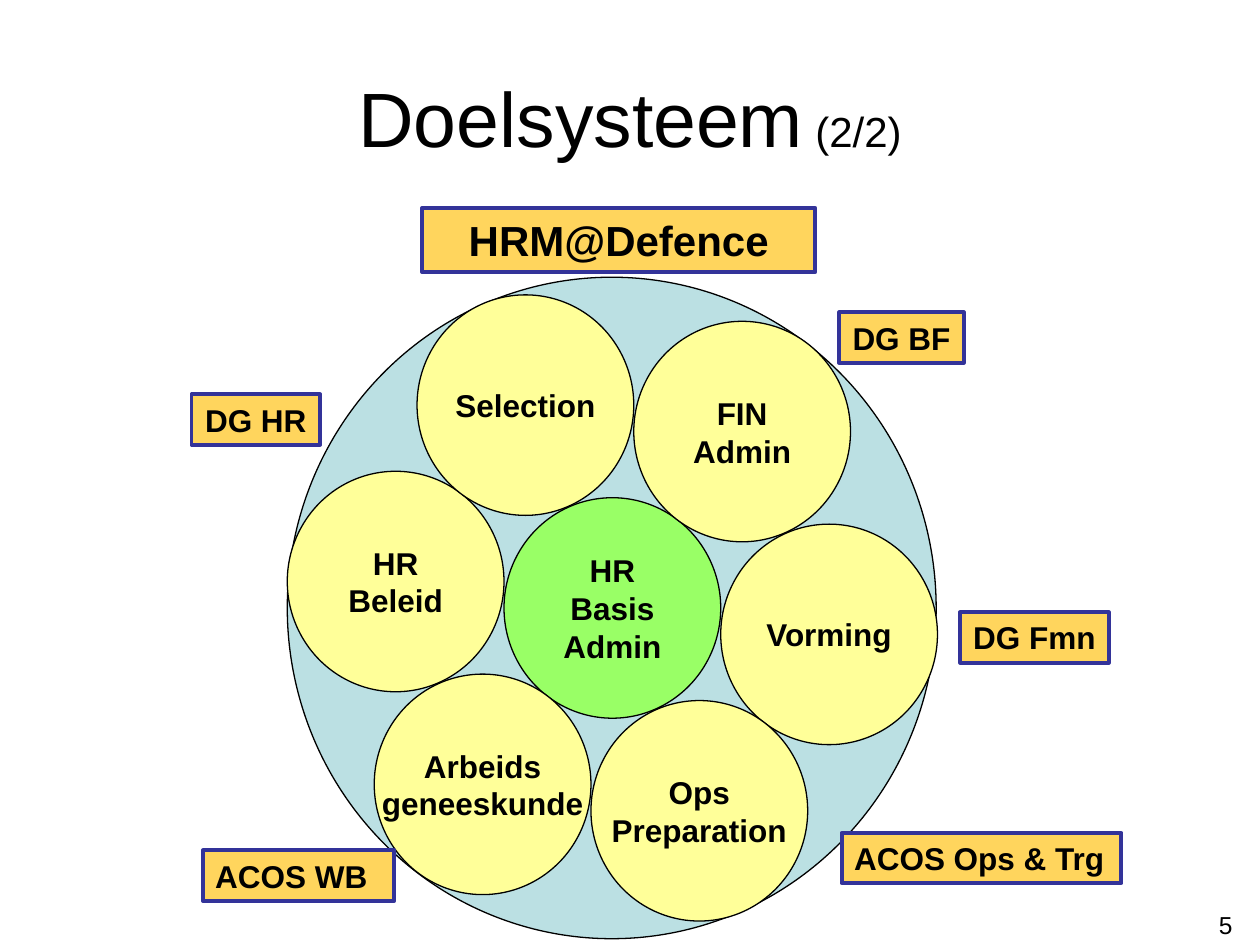
from dataclasses import dataclass

from pptx import Presentation
from pptx.dml.color import RGBColor
from pptx.enum.shapes import MSO_SHAPE as Preset
from pptx.enum.text import MSO_ANCHOR as Anchor, MSO_AUTO_SIZE as AutoSize, PP_ALIGN as Align
from pptx.util import Inches, Pt

FONT = "Arial"
BLACK, NAVY = "000000", "333399"
PALE_BLUE, GREEN, YELLOW, AMBER = "BBE0E3", "99FF66", "FFFF99", "FFD55D"
CIRCLE_WIDTH, CIRCLE_HEIGHT = 1.72, 1.75
HUB_LEFT, HUB_TOP = 4.0, 3.95


@dataclass
class Label:
    text: str
    left: float
    top: float
    width: float
    height: float = 0.4
    size: int = 18
    align: Align = Align.CENTER
    wrap: bool = False


@dataclass
class OppositePair:
    """Two circles mirrored through the hub; the offset leads to the first."""
    first: str
    second: str
    across: float
    down: float


PAIRS = [
    OppositePair("FIN\nAdmin", "Arbeids\ngeneeskunde", 1.03, -1.4),
    OppositePair("Vorming", "HR\nBeleid", 1.72, 0.21),
    OppositePair("Ops\nPreparation", "Selection", 0.69, 1.61),
]

LABELS = [
    Label("DG HR", 1.52, 3.13, 1.02),
    Label("ACOS WB", 1.61, 6.75, 1.52, align=Align.LEFT, wrap=True),
    Label("ACOS Ops & Trg", 6.68, 6.61, 2.22, align=Align.LEFT),
    Label("DG BF", 6.66, 2.48, 0.99),
    Label("DG Fmn", 7.62, 4.86, 1.18),
    Label("HRM@Defence", 3.35, 1.65, 3.12, 0.51, size=24, wrap=True),
]


def rgb(value: str) -> RGBColor:
    return RGBColor.from_string(value)


def add_span(para, text: str, size: int, bold: bool = False) -> None:
    span = para.add_run()
    span.text = text
    span.font.name = FONT
    span.font.size = Pt(size)
    span.font.bold = bold
    span.font.color.rgb = rgb(BLACK)


def write_lines(frame, text: str, size: int, align: Align, bold: bool = True) -> None:
    for index, line in enumerate(text.split("\n")):
        para = frame.add_paragraph() if index else frame.paragraphs[0]
        para.alignment = align
        add_span(para, line, size, bold)


def add_figure(shapes, preset, left: float, top: float, width: float, height: float,
               fill: str, line: str, weight: float):
    figure = shapes.add_shape(preset, Inches(left), Inches(top), Inches(width), Inches(height))
    figure.shadow.inherit = False
    figure.fill.solid()
    figure.fill.fore_color.rgb = rgb(fill)
    figure.line.color.rgb = rgb(line)
    figure.line.width = Pt(weight)
    return figure


def add_circle(shapes, text: str, left: float, top: float, fill: str) -> None:
    circle = add_figure(shapes, Preset.OVAL, left, top, CIRCLE_WIDTH, CIRCLE_HEIGHT,
                        fill, BLACK, 0.75)
    frame = circle.text_frame
    frame.word_wrap = False
    frame.vertical_anchor = Anchor.MIDDLE
    write_lines(frame, text, 18, Align.CENTER)


def add_label(shapes, label: Label) -> None:
    box = add_figure(shapes, Preset.RECTANGLE, label.left, label.top, label.width,
                     label.height, AMBER, NAVY, 2.25)
    frame = box.text_frame
    frame.word_wrap = label.wrap
    frame.auto_size = AutoSize.SHAPE_TO_FIT_TEXT
    frame.vertical_anchor = Anchor.TOP
    write_lines(frame, label.text, label.size, label.align)


def add_title(page) -> None:
    title = page.shapes.title
    title.left, title.top = Inches(0.5), Inches(0.3)
    title.width, title.height = Inches(9), Inches(1.25)
    title.text_frame.vertical_anchor = Anchor.MIDDLE
    para = title.text_frame.paragraphs[0]
    para.alignment = Align.CENTER
    add_span(para, "Doelsysteem", 44)
    add_span(para, " (2/2)", 24)


def add_page_number(page) -> None:
    box = page.shapes.add_textbox(Inches(7.55), Inches(7.17), Inches(2.33), Inches(0.52))
    box.text_frame.word_wrap = True
    write_lines(box.text_frame, "5", 14, Align.RIGHT, bold=False)


def main() -> None:
    deck = Presentation()
    deck.slide_width, deck.slide_height = Inches(10), Inches(7.5)
    page = deck.slides.add_slide(deck.slide_layouts[5])
    add_title(page)
    add_page_number(page)

    shapes = page.shapes
    add_figure(shapes, Preset.OVAL, 2.28, 2.2, 5.15, 5.25, PALE_BLUE, BLACK, 0.75)
    add_circle(shapes, "HR\nBasis\nAdmin", HUB_LEFT, HUB_TOP, GREEN)
    for pair in PAIRS:
        for text, sign in ((pair.first, 1), (pair.second, -1)):
            add_circle(shapes, text, HUB_LEFT + sign * pair.across,
                       HUB_TOP + sign * pair.down, YELLOW)
    for label in LABELS:
        add_label(shapes, label)
    deck.save("out.pptx")


if __name__ == "__main__":
    main()
